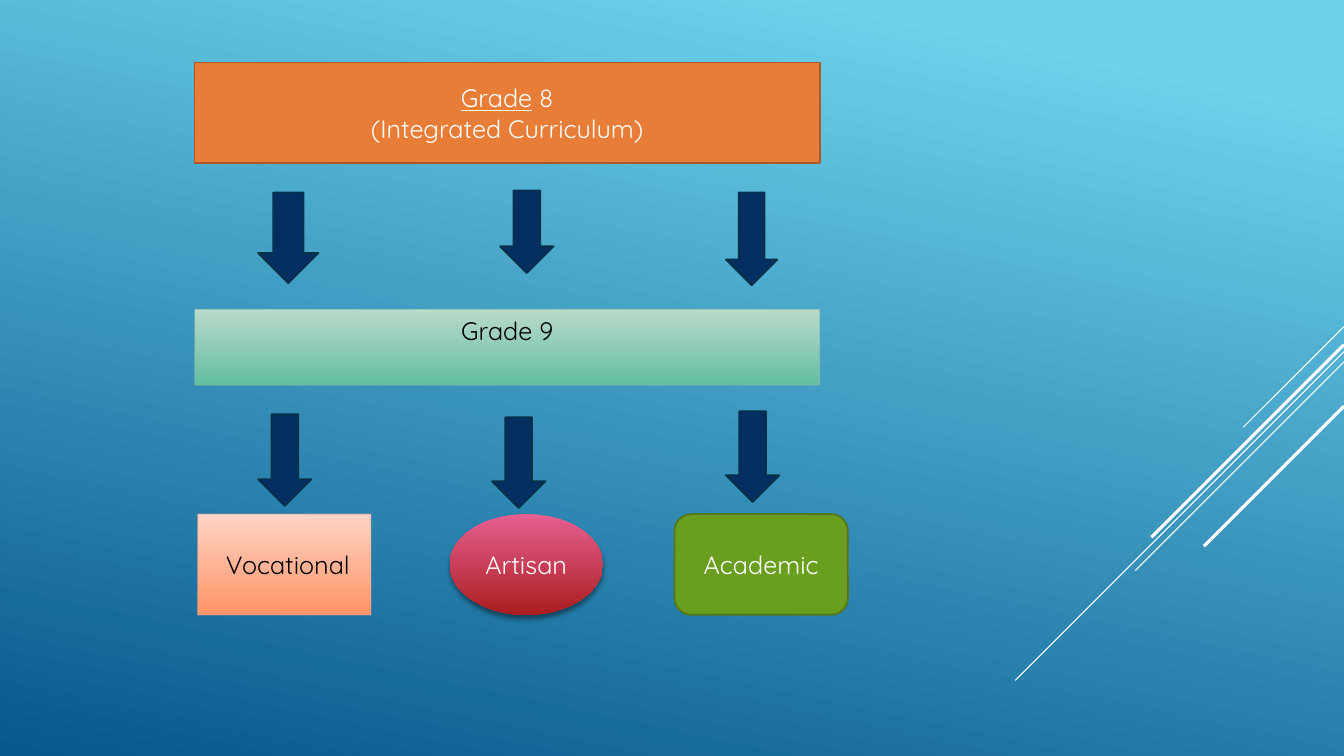
"""Build the slide on the pathways from Grade 8 to Grade 9 and beyond."""
from dataclasses import dataclass

from lxml import etree
from pptx import Presentation
from pptx import util as u
from pptx.dml.color import RGBColor
from pptx.enum import shapes, text
from pptx.oxml.ns import qn

WIDE, HIGH = u.Inches(13.33), u.Inches(7.5)
KIND = shapes.MSO_SHAPE


@dataclass(frozen=True)
class Theme:
    """Colours, type and line widths of the slide."""
    font: str = "Quicksand"
    size: float = 18
    white: str = "FFFFFF"
    black: str = "000000"
    sky: tuple = ("6ED2EB", "06588E")
    navy: str = "052F61"
    navy_edge: str = "043148"
    orange: str = "E87D37"
    orange_edge: str = "AC5929"
    mint: tuple = ("B9DACA", "63BEA2")
    mint_edge: str = "8AB7A1"
    peach: tuple = ("FFD4C6", "FF9467")
    peach_edge: str = "EEA78F"
    rose: tuple = ("E66091", "AA1E1F")
    green: str = "6A9E1F"
    green_edge: str = "567517"
    thin: float = 0.75
    firm: float = 1.25
    thick: float = 2.25


LOOK = Theme()


def across(share):
    """Turn a percentage of the slide's width into a length."""
    return round(WIDE * share / 100)


def down(share):
    """Turn a percentage of the slide's height into a length."""
    return round(HIGH * share / 100)


def paint(fill, tone, angle=90, start=0):
    """Fill with one colour, or with a gradient between two."""
    if isinstance(tone, str):
        fill.solid()
        fill.fore_color.rgb = RGBColor.from_string(tone)
        return
    fill.gradient()
    fill.gradient_angle = 360 - angle
    for stop, hue, spot in zip(fill.gradient_stops, tone, (start, 1)):
        stop.color.rgb = RGBColor.from_string(hue)
        stop.position = spot


def fade(color, share):
    """Set the opacity of a colour element in percent."""
    etree.SubElement(color, qn("a:alpha")).set("val", str(share * 1000))


def edge(line, tone, width, opaque=100):
    """Draw an outline in one colour."""
    paint(line.fill, tone)
    line.width = u.Pt(width)
    if opaque < 100:
        fade(line.fill._xPr.find(".//" + qn("a:srgbClr")), opaque)


def block(slide, kind, spot, tone, rim=None, width=LOOK.firm, opaque=100):
    """Add a filled shape at left, top, width and height in percent."""
    x, y, w, h = spot
    shape = slide.shapes.add_shape(kind, across(x), down(y), across(w), down(h))
    shape.shadow.inherit = False
    paint(shape.fill, tone)
    if rim:
        edge(shape.line, rim, width, opaque)
    else:
        shape.line.fill.background()
    return shape


def label(shape, lines, tone, anchor=text.MSO_ANCHOR.MIDDLE):
    """Write centred lines, with words between underscores underlined."""
    frame = shape.text_frame
    frame.word_wrap = True
    frame.vertical_anchor = anchor
    for row, line in enumerate(lines):
        para = frame.add_paragraph() if row else frame.paragraphs[0]
        para.alignment = text.PP_ALIGN.CENTER
        for turn, part in enumerate(line.split("_")):
            if part:
                run = para.add_run()
                run.text = part
                run.font.name = LOOK.font
                run.font.size = u.Pt(LOOK.size)
                run.font.underline = turn % 2 == 1
                run.font.color.rgb = RGBColor.from_string(tone)


def shade(shape):
    """Give a shape a soft shadow straight below."""
    glow = shape._element.spPr.find(qn("a:effectLst"))
    cast = etree.SubElement(glow, qn("a:outerShdw"), blurRad=str(u.Pt(4)),
                            dist=str(u.Pt(3)), dir="5400000", rotWithShape="0")
    hue = etree.SubElement(cast, qn("a:srgbClr"), val=LOOK.black)
    fade(hue, 46)


def streak(slide, top, reach, width):
    """Draw a diagonal line down and left from the right edge."""
    line = slide.shapes.add_connector(
        shapes.MSO_CONNECTOR.STRAIGHT, WIDE, down(top),
        WIDE - down(reach), down(top + reach))
    edge(line.line, LOOK.white, width)
    etree.SubElement(line._element.spPr, qn("a:effectLst"))


def main():
    """Lay out the slide and save it."""
    deck = Presentation()
    deck.slide_width, deck.slide_height = WIDE, HIGH
    slide = deck.slides.add_slide(deck.slide_layouts[6])
    paint(slide.background.fill, LOOK.sky, 102, 0.1)

    for top, reach, width in (
            (43.2, 13.33, LOOK.thin), (46.53, 43.47, LOOK.thin),
            (47.87, 27.6, LOOK.thin), (45.6, 25.47, LOOK.thick),
            (53.73, 18.53, LOOK.thick)):
        streak(slide, top, reach, width)

    eight = block(slide, KIND.RECTANGLE, (14.48, 8.27, 46.51, 13.33),
                  LOOK.orange, LOOK.orange_edge)
    label(eight, ["_Grade_ 8", "(Integrated Curriculum)"], LOOK.white)

    nine = block(slide, KIND.RECTANGLE, (14.48, 40.93, 46.51, 10),
                 LOOK.mint, LOOK.mint_edge, LOOK.thin, 60)
    label(nine, ["Grade 9"], LOOK.black, text.MSO_ANCHOR.TOP)
    nine.text_frame.margin_top = down(0.83)

    trade = block(slide, KIND.RECTANGLE, (14.7, 68, 12.9, 13.33),
                  LOOK.peach, LOOK.peach_edge, LOOK.thin, 60)
    label(trade, ["Vocational"], LOOK.black)
    trade.text_frame.margin_left = across(1.28)

    craft = block(slide, KIND.OVAL, (33.46, 68, 11.4, 13.33), LOOK.rose)
    label(craft, ["Artisan"], LOOK.white)
    shade(craft)

    study = block(slide, KIND.ROUNDED_RECTANGLE, (50.19, 68, 12.9, 13.33),
                  LOOK.green, LOOK.green_edge)
    label(study, ["Academic"], LOOK.white)

    for spot in (
            (19.2, 25.47, 4.5, 12), (37.21, 25.2, 3.98, 10.93),
            (54.01, 25.47, 3.83, 12.27), (19.2, 54.8, 3.98, 12.13),
            (36.61, 55.2, 3.98, 12), (54.01, 54.4, 3.98, 12)):
        block(slide, KIND.DOWN_ARROW, spot, LOOK.navy, LOOK.navy_edge)

    deck.save("out.pptx")


if __name__ == "__main__":
    main()
